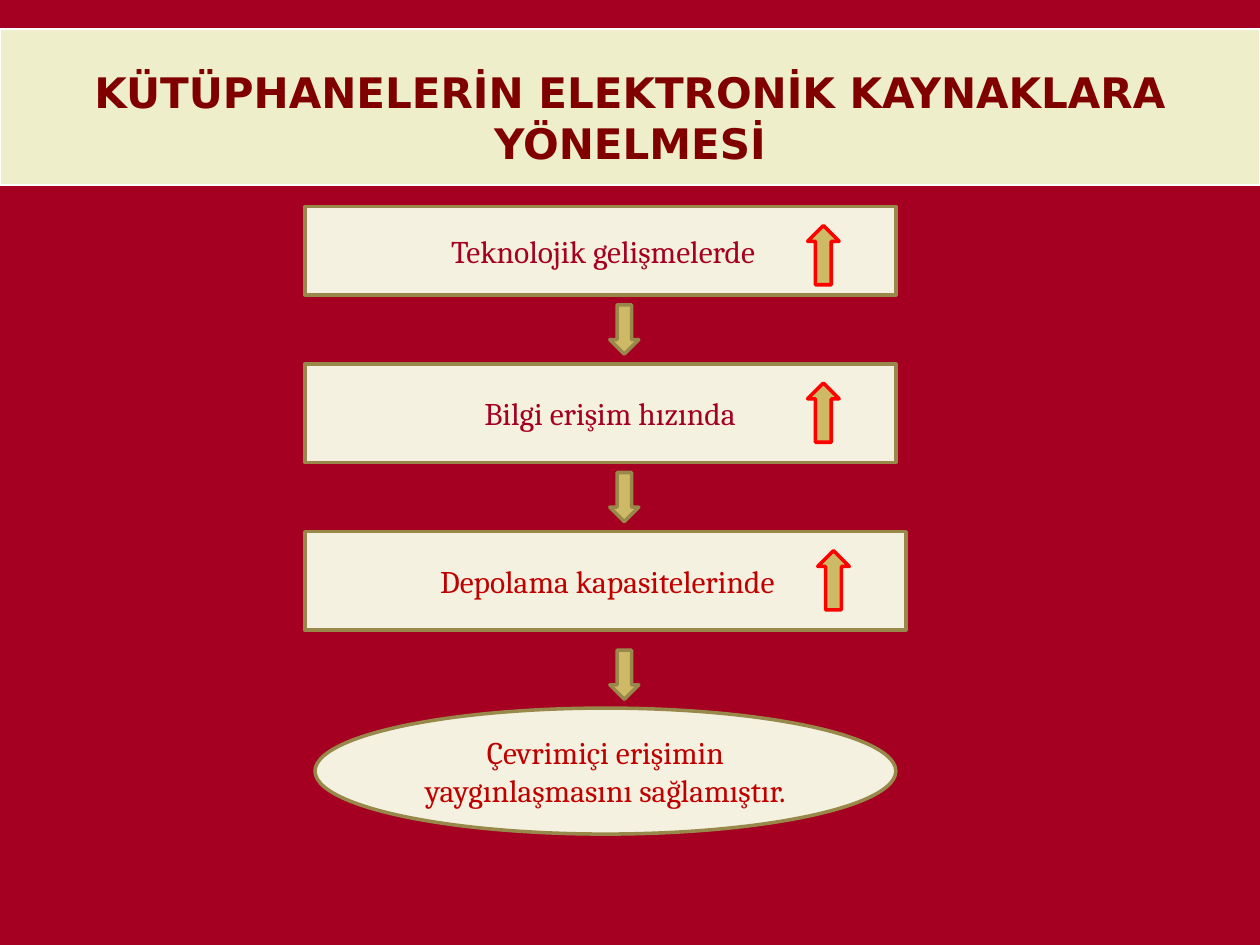
from pptx import Presentation
from pptx.dml.color import RGBColor
from pptx.enum.shapes import MSO_SHAPE
from pptx.enum.text import MSO_ANCHOR, PP_ALIGN
from pptx.util import Inches, Pt

CRIMSON = RGBColor(0xA5, 0x00, 0x21)
RED = RGBColor(0xC0, 0x00, 0x00)
BRIGHT_RED = RGBColor(0xFF, 0x00, 0x00)
MAROON = RGBColor(0x80, 0x00, 0x00)
WHITE = RGBColor(0xFF, 0xFF, 0xFF)
BANNER = RGBColor(0xEE, 0xEE, 0xCA)
CREAM = RGBColor(0xF5, 0xF1, 0xE0)
GOLD = RGBColor(0xCE, 0xB9, 0x66)
OLIVE = RGBColor(0x98, 0x89, 0x4B)

presentation = Presentation()
presentation.slide_width = Inches(10)
presentation.slide_height = Inches(7.5)
slide = presentation.slides.add_slide(presentation.slide_layouts[6])
slide.background.fill.solid()
slide.background.fill.fore_color.rgb = CRIMSON

# The slide is a grid of 100 columns by 75 rows.
COLUMN = presentation.slide_width / 100
ROW = presentation.slide_height / 75


def add_block(kind, left, top, width, height, fill, line, line_width=2):
    """Add a plain shape, placed in grid columns and rows."""
    shape = slide.shapes.add_shape(kind, round(left * COLUMN), round(top * ROW),
                                   round(width * COLUMN), round(height * ROW))
    shape.shadow.inherit = False
    shape.fill.solid()
    shape.fill.fore_color.rgb = fill
    shape.line.color.rgb = line
    shape.line.width = Pt(line_width)
    return shape


def write_centred(shape, text, font_name, size, color, bold=False):
    frame = shape.text_frame
    frame.word_wrap = True
    frame.vertical_anchor = MSO_ANCHOR.MIDDLE
    paragraph = frame.paragraphs[0]
    paragraph.alignment = PP_ALIGN.CENTER
    run = paragraph.add_run()
    run.text = text
    run.font.name = font_name
    run.font.size = Pt(size)
    run.font.bold = bold
    run.font.color.rgb = color


title = add_block(MSO_SHAPE.RECTANGLE, 0, 2.3, 100, 12.4, BANNER, WHITE, 0.75)
title.text_frame.margin_top = Inches(0.21)
write_centred(title, "KÜTÜPHANELERİN ELEKTRONİK KAYNAKLARA YÖNELMESİ",
              "DejaVu Sans", 24, MAROON, bold=True)

# Text, text colour, top, width, height, extra left inset in columns
steps = [
    ("Teknolojik gelişmelerde", CRIMSON, 16.4, 46.9, 7, 0.4),
    ("Bilgi erişim hızında", CRIMSON, 28.9, 46.9, 7.8, 1.5),
    ("Depolama kapasitelerinde", RED, 42.2, 47.7, 7.8, 0.3),
]
for text, color, top, width, height, inset in steps:
    step = add_block(MSO_SHAPE.RECTANGLE, 24.2, top, width, height, CREAM, OLIVE)
    step.text_frame.margin_left = round((1 + inset) * COLUMN)
    write_centred(step, text, "Cambria", 18, color)
    increase = add_block(MSO_SHAPE.RIGHT_ARROW, 16.1 + width, top + 2.6, 4.7, 2.5,
                         GOLD, BRIGHT_RED)
    increase.rotation = 270

for top in (24.2, 37.5, 51.6):
    add_block(MSO_SHAPE.DOWN_ARROW, 48.4, top, 2.3, 3.9, GOLD, OLIVE)

result = add_block(MSO_SHAPE.OVAL, 25, 56.2, 46.1, 10, CREAM, OLIVE)
write_centred(result, "Çevrimiçi erişimin yaygınlaşmasını sağlamıştır.",
              "Cambria", 18, RED)

presentation.save("out.pptx")
